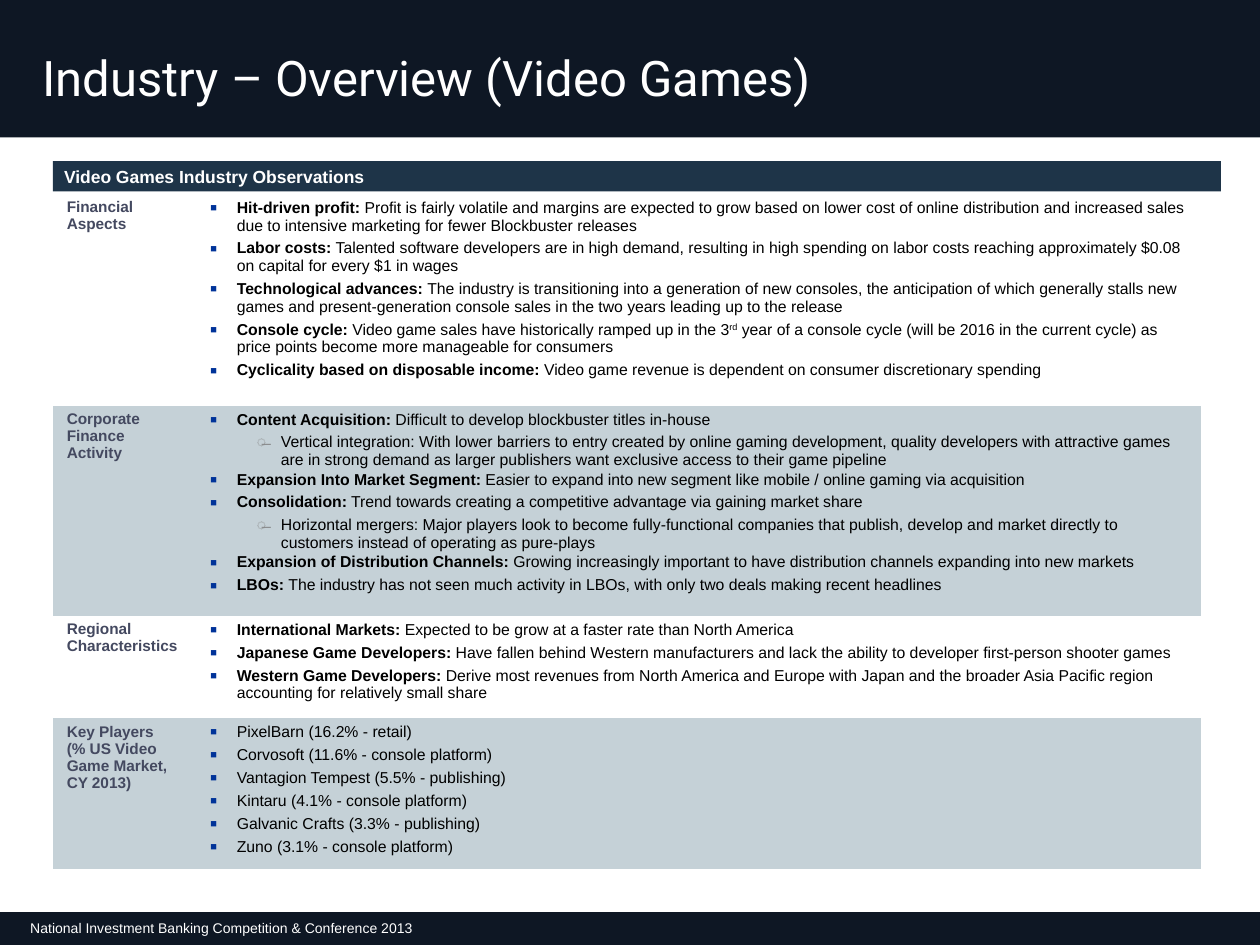
from pptx import Presentation
from pptx import util as u
from pptx.dml.color import RGBColor
from pptx.enum import shapes, text
from pptx.oxml import ns
from lxml import etree

WIDTH, HEIGHT = u.Inches(10), u.Inches(7.5)
NIGHT = RGBColor(0x0E, 0x17, 0x24)
NAVY = RGBColor(0x1E, 0x34, 0x48)
MIST = RGBColor(0xC5, 0xD1, 0xD7)
SLATE = RGBColor(0x44, 0x49, 0x60)
BLUE = RGBColor(0x00, 0x33, 0x99)
GRAY = RGBColor(0x80, 0x80, 0x80)
BLACK = RGBColor(0, 0, 0)
WHITE = RGBColor(0xFF, 0xFF, 0xFF)

PLAIN_TABLE = "{2D5ABB26-0587-4C30-8999-92F81FD0307C}"
COLUMNS = (1.14, 7.97)
POINT = dict(mark="■", color=BLUE, size=70, left=0.21, hang=0.21, after=3)
DETAIL = dict(mark="̶", color=GRAY, size=100, left=0.56, hang=0.19, after=1)

SECTIONS = [
    ("Financial Aspects", 1.68, [
        (POINT, "Hit-driven profit: ",
         "Profit is fairly volatile and margins are expected to grow based on lower cost of "
         "online distribution and increased sales due to intensive marketing for fewer "
         "Blockbuster releases"),
        (POINT, "Labor costs: ",
         "Talented software developers are in high demand, resulting in high spending on labor "
         "costs reaching approximately $0.08 on capital for every $1 in wages"),
        (POINT, "Technological advances: ",
         "The industry is transitioning into a generation of new consoles, the anticipation of "
         "which generally stalls new games and present-generation console sales in the two "
         "years leading up to the release"),
        (POINT, "Console cycle: ",
         "Video game sales have historically ramped up in the 3^rd^ year of a console cycle "
         "(will be 2016 in the current cycle) as price points become more manageable for "
         "consumers"),
        (POINT, "Cyclicality based on disposable income: ",
         "Video game revenue is dependent on consumer discretionary spending"),
    ]),
    ("Corporate Finance Activity", 1.67, [
        (POINT, "Content Acquisition:", " Difficult to develop blockbuster titles in-house"),
        (DETAIL, "",
         "Vertical integration: With lower barriers to entry created by online gaming "
         "development, quality developers with attractive games are in strong demand as larger "
         "publishers want exclusive access to their game pipeline"),
        (POINT, "Expansion Into Market Segment: ",
         "Easier to expand into new segment like mobile / online gaming via acquisition"),
        (POINT, "Consolidation:",
         " Trend towards creating a competitive advantage via gaining market share"),
        (DETAIL, "",
         "Horizontal mergers: Major players look to become fully-functional companies that "
         "publish, develop and market directly to customers instead of operating as pure-plays"),
        (POINT, "Expansion of Distribution Channels: ",
         "Growing increasingly important to have distribution channels expanding into new "
         "markets"),
        (POINT, "LBOs: ",
         "The industry has not seen much activity in LBOs, with only two deals making recent "
         "headlines"),
    ]),
    ("Regional Characteristics", 0.81, [
        (POINT, "International Markets: ",
         "Expected to be grow at a faster rate than North America"),
        (POINT, "Japanese Game Developers: ",
         "Have fallen behind Western manufacturers and lack the ability to developer "
         "first-person shooter games"),
        (POINT, "Western Game Developers: ",
         "Derive most revenues from North America and Europe with Japan and the broader Asia "
         "Pacific region accounting for relatively small share"),
    ]),
    ("Key Players \n(% US Video Game Market, CY 2013)", 1.2, [
        (POINT, "", "PixelBarn (16.2% - retail)"),
        (POINT, "", "Corvosoft (11.6% - console platform)"),
        (POINT, "", "Vantagion Tempest (5.5% - publishing)"),
        (POINT, "", "Kintaru (4.1% - console platform)"),
        (POINT, "", "Galvanic Crafts (3.3% - publishing)"),
        (POINT, "", "Zuno (3.1% - console platform)"),
    ]),
]


def add_run(paragraph, wording, size, color, bold=False, face="Arial"):
    """Append one formatted run and return it."""
    run = paragraph.add_run()
    run.text = wording
    run.font.size, run.font.bold, run.font.name = u.Pt(size), bold, face
    run.font.color.rgb = color
    return run


def add_band(slide, left, top, width, height, color):
    """Draw a plain filled bar placed by shares of the slide."""
    band = slide.shapes.add_shape(
        shapes.MSO_SHAPE.RECTANGLE, int(WIDTH * left), int(HEIGHT * top),
        int(WIDTH * width), int(HEIGHT * height))
    band.shadow.inherit = False
    band.fill.solid()
    band.fill.fore_color.rgb = color
    band.line.fill.background()


def add_label(slide, left, top, width, height, wording, size, inset=0.1, **style):
    """Place one line of white text by shares of the slide."""
    label = slide.shapes.add_textbox(
        int(WIDTH * left), int(HEIGHT * top), int(WIDTH * width), int(HEIGHT * height))
    frame = label.text_frame
    frame.word_wrap = True
    frame.vertical_anchor = text.MSO_ANCHOR.MIDDLE
    frame.margin_left = frame.margin_right = u.Inches(inset)
    frame.margin_top = frame.margin_bottom = u.Inches(inset / 2)
    add_run(frame.paragraphs[0], wording, size, WHITE, **style)


def set_bullet(paragraph, level):
    """Give a paragraph the indent, marker and spacing of its level."""
    props = paragraph._p.get_or_add_pPr()
    props.set("marL", str(u.Inches(level["left"])))
    props.set("indent", str(-u.Inches(level["hang"])))
    shade = etree.SubElement(props, ns.qn("a:buClr"))
    etree.SubElement(shade, ns.qn("a:srgbClr"), val=str(level["color"]))
    etree.SubElement(props, ns.qn("a:buSzPct"), val=str(level["size"] * 1000))
    etree.SubElement(props, ns.qn("a:buFont"), typeface="Arial")
    etree.SubElement(props, ns.qn("a:buChar"), char=level["mark"])
    paragraph.space_after = u.Pt(level["after"])


def fill_heading(cell, heading):
    """Write a section heading, breaking at each newline."""
    paragraph = cell.text_frame.paragraphs[0]
    paragraph.space_after = u.Pt(3)
    for number, line in enumerate(heading.split("\n")):
        if number:
            paragraph.add_line_break()
        add_run(paragraph, line, 8.8, SLATE, bold=True)


def fill_observations(cell, observations):
    """Write bulleted observations; text between carets is raised."""
    frame = cell.text_frame
    for number, (level, lead, body) in enumerate(observations):
        paragraph = frame.add_paragraph() if number else frame.paragraphs[0]
        set_bullet(paragraph, level)
        if lead:
            add_run(paragraph, lead, 9, BLACK, bold=True)
        for part, wording in enumerate(body.split("^")):
            run = add_run(paragraph, wording, 9, BLACK)
            if part % 2:
                run.font._element.set("baseline", "30000")


def add_observations_table(slide):
    """Build the table of sections with every second row shaded."""
    frame = slide.shapes.add_table(
        len(SECTIONS), len(COLUMNS), u.Inches(0.42), u.Inches(1.54),
        u.Inches(sum(COLUMNS)), u.Inches(sum(section[1] for section in SECTIONS)))
    table = frame.table
    table.first_row = table.horz_banding = False
    table._tbl.tblPr.find(ns.qn("a:tableStyleId")).text = PLAIN_TABLE
    for column, width in zip(table.columns, COLUMNS):
        column.width = u.Inches(width)
    for number, (heading, height, observations) in enumerate(SECTIONS):
        row = table.rows[number]
        row.height = u.Inches(height)
        for cell in row.cells:
            cell.margin_left = cell.margin_right = u.Inches(0.11)
            cell.margin_top = cell.margin_bottom = u.Inches(0.04)
            if number % 2:
                cell.fill.solid()
                cell.fill.fore_color.rgb = MIST
            else:
                cell.fill.background()
        heading_cell, observations_cell = row.cells
        observations_cell.margin_bottom = 0
        fill_heading(heading_cell, heading)
        fill_observations(observations_cell, observations)


def main():
    """Build and save the industry overview slide."""
    deck = Presentation()
    deck.slide_width, deck.slide_height = WIDTH, HEIGHT
    slide = deck.slides.add_slide(deck.slide_layouts[6])
    add_band(slide, 0, 0, 1, 1.09 / 7.5, NIGHT)
    add_band(slide, 0, 7.24 / 7.5, 1, 0.26 / 7.5, NIGHT)
    add_label(slide, 0.024, 7.3 / 7.5, 0.45, 0.13 / 7.5,
              "National Investment Banking Competition & Conference 2013", 8, inset=0)
    add_label(slide, 0.024, 0.28 / 7.5, 0.945, 0.66 / 7.5,
              "Industry – Overview (Video Games)", 28, face="Roboto")
    add_observations_table(slide)
    add_band(slide, 0.042, 1.28 / 7.5, 0.927, 0.24 / 7.5, NAVY)
    add_label(slide, 0.041, 1.28 / 7.5, 0.918, 0.24 / 7.5,
              "Video Games Industry Observations", 10, bold=True)
    deck.save("out.pptx")


if __name__ == "__main__":
    main()
